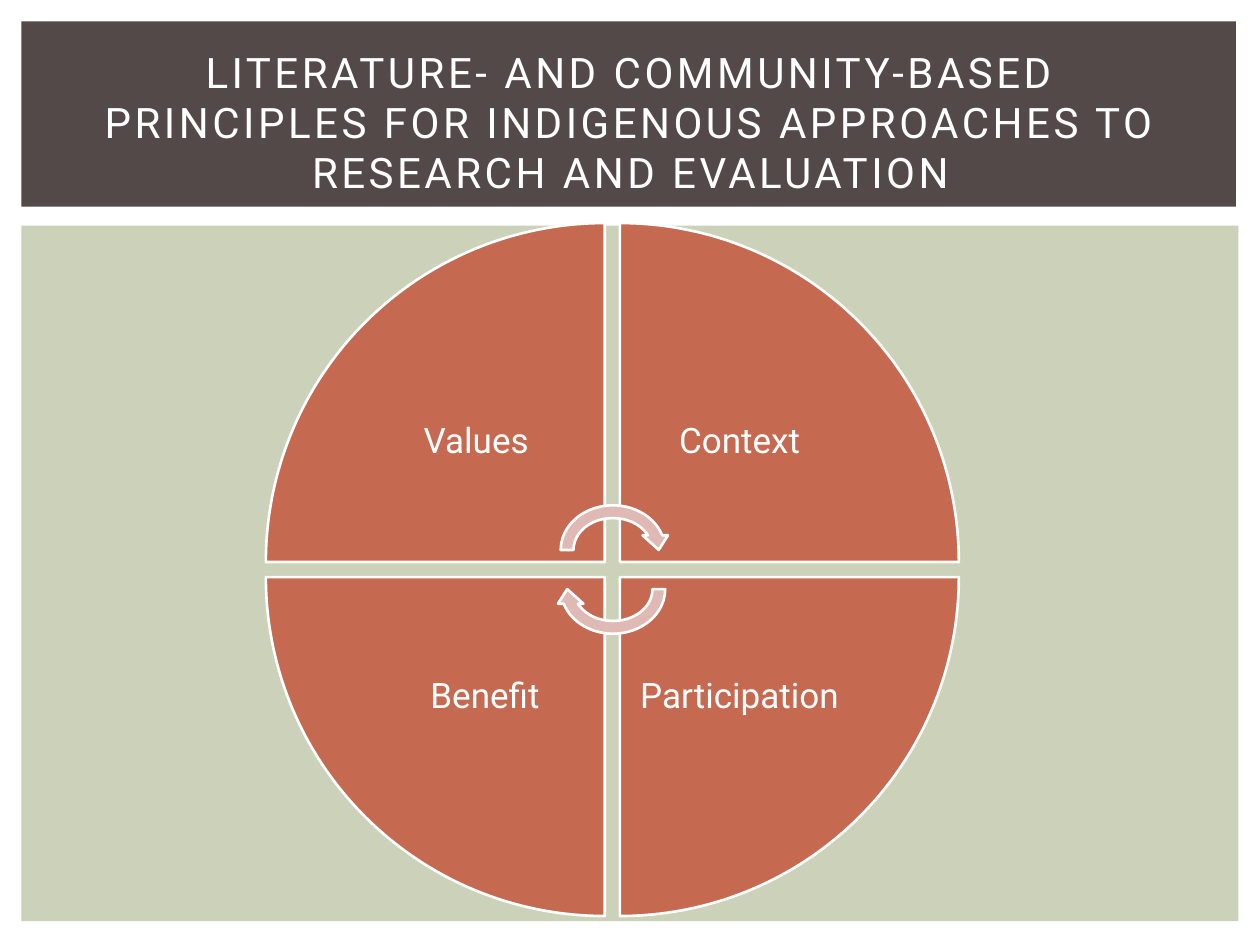
import pptx
import pptx.util
import pptx.dml.color
import pptx.enum.shapes
import pptx.enum.text

Inch = pptx.util.Inches
Pt = pptx.util.Pt
Kind = pptx.enum.shapes.MSO_SHAPE
Anchor = pptx.enum.text.MSO_ANCHOR
Align = pptx.enum.text.PP_ALIGN

# Content
TITLE = ("LITERATURE- AND COMMUNITY-BASED PRINCIPLES FOR "
         "INDIGENOUS APPROACHES TO RESEARCH AND EVALUATION")
# label, column, row, turn, right inset
WEDGES = [
    ("Values", 0, 0, 0, 0.3),
    ("Context", 1, 0, 90, 0.16),
    ("Participation", 1, 1, 180, 0.16),
    ("Benefit", 0, 1, 270, 0.16),
]
COLORS = {"panel": "CCD1B9", "band": "534949", "wedge": "C66951",
          "arrow": "DFB9B3", "white": "FFFFFF"}
FONT = "Roboto"

# Wheel geometry in inches
LEFT, TOP = 2.11, 1.77
SIZE, STEP = 2.69, 2.81
LABEL = 1.9
ARROWS = [(3.96, 0), (4.27, 180)]  # top, turn


def paint(name):
    return pptx.dml.color.RGBColor.from_string(COLORS[name])


def draw(slide, kind, box, fill, turn=0, edge=False):
    shape = slide.shapes.add_shape(kind, *map(Inch, box))
    shape.shadow.inherit = False
    shape.rotation = turn
    shape.fill.solid()
    shape.fill.fore_color.rgb = paint(fill)
    if edge:
        shape.line.color.rgb = paint("white")
        shape.line.width = Pt(1.5)
    else:
        shape.line.fill.background()
    return shape


def write(frame, text, size):
    frame.word_wrap = True
    frame.auto_size = pptx.enum.text.MSO_AUTO_SIZE.NONE
    frame.vertical_anchor = Anchor.MIDDLE
    para = frame.paragraphs[0]
    para.alignment = Align.CENTER
    run = para.add_run()
    run.text = text
    run.font.name = FONT
    run.font.size = Pt(size)
    run.font.color.rgb = paint("white")
    return run


def main():
    deck = pptx.Presentation()
    deck.slide_width, deck.slide_height = Inch(10), Inch(7.5)
    slide = deck.slides.add_slide(deck.slide_layouts[5])

    # Background panels
    draw(slide, Kind.RECTANGLE, (0.17, 1.79, 9.66, 5.52), "panel")
    draw(slide, Kind.RECTANGLE, (0.17, 0.17, 9.64, 1.47), "band")

    # Title, brought in front of its band
    title = slide.shapes.title
    title.left, title.top = Inch(0.42), Inch(0.39)
    title.width, title.height = Inch(9.17), Inch(1.15)
    frame = title.text_frame
    frame.margin_left = frame.margin_right = Inch(0.2)
    run = write(frame, TITLE, 24)
    run.font._element.set("spc", "200")
    slide.shapes._spTree.append(title._element)

    # Four wedges, each label set against the wheel's centre
    for text, col, row, turn, inset in WEDGES:
        x, y = LEFT + col * STEP, TOP + row * STEP
        draw(slide, Kind.PIE_WEDGE, (x, y, SIZE, SIZE), "wedge", turn, True)
        shift = SIZE - LABEL
        box = (x + (1 - col) * shift, y + (1 - row) * shift, LABEL, LABEL)
        frame = slide.shapes.add_textbox(*map(Inch, box)).text_frame
        frame.margin_left = frame.margin_top = frame.margin_bottom = Inch(0.16)
        frame.margin_right = Inch(inset)
        write(frame, text, 20)
        frame.paragraphs[0].line_spacing = 0.9

    # Turning arrows at the centre
    for top, turn in ARROWS:
        draw(slide, Kind.CIRCULAR_ARROW, (4.4, top, 0.93, 0.81),
             "arrow", turn, True)

    deck.save("out.pptx")


if __name__ == "__main__":
    main()
